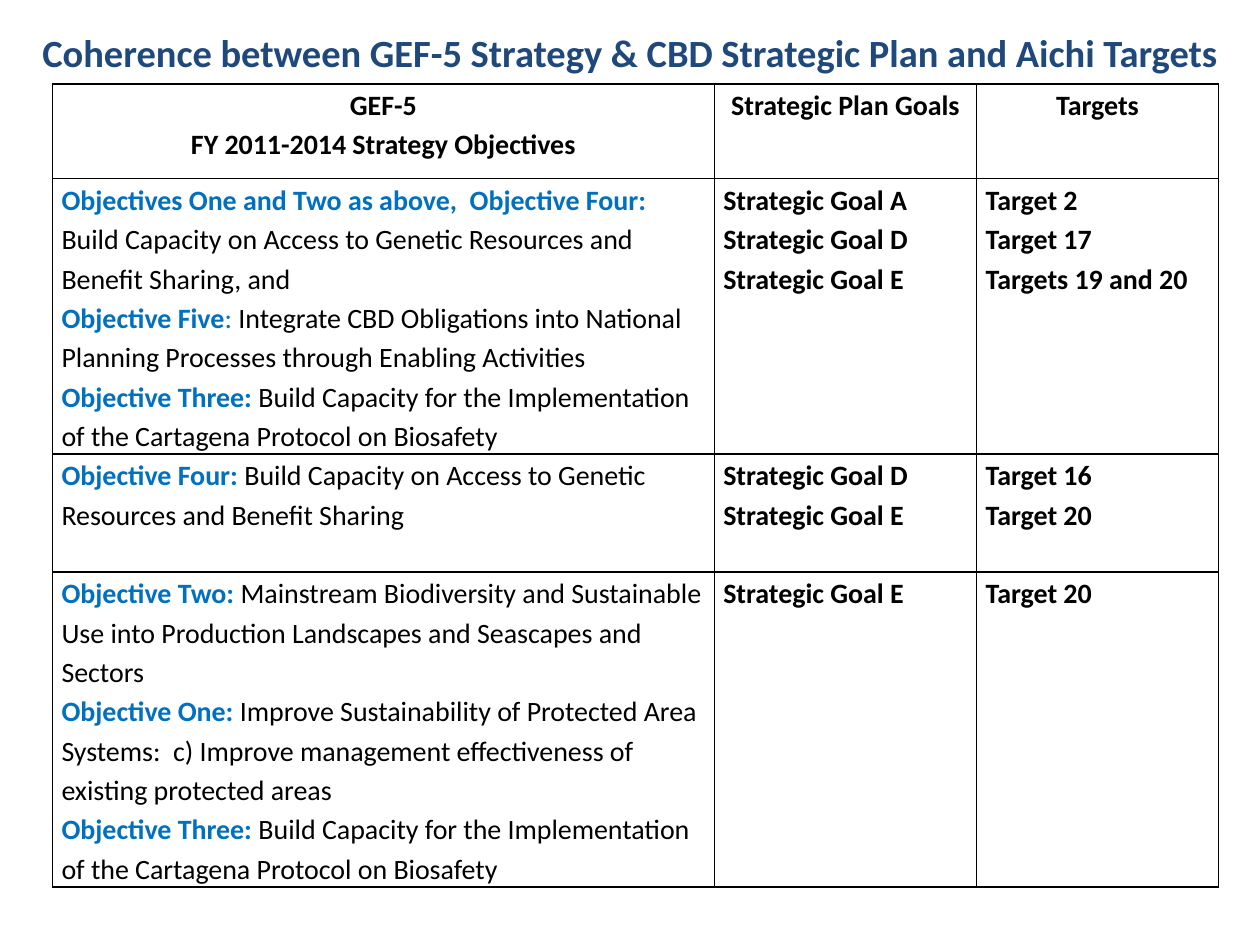
import pptx
import pptx.dml.color
import pptx.enum.text
import pptx.oxml
import pptx.oxml.ns
import pptx.util

Cm, Pt = pptx.util.Cm, pptx.util.Pt
ALIGN = pptx.enum.text.PP_ALIGN

BLACK, BLUE, NAVY, WHITE = "000000", "0070C0", "1F497D", "FFFFFF"
TITLE_FONT = {"name": "Calibri", "size": Pt(22), "bold": True}
BOLD_FONT = {"name": "Calibri", "size": Pt(16), "bold": True}
PLAIN_FONT = {**BOLD_FONT, "bold": False}
CELL_FORMAT = {"margin_left": Cm(0.18), "margin_right": Cm(0.18),
               "margin_top": 0, "margin_bottom": 0}

COLUMN_WIDTHS = [13.34, 5.29, 4.87]
ROW_HEIGHTS = [1.91, 5.54, 2.38, 6.33]

BIOSAFETY = ("Objective Three: ", "Build Capacity for the Implementation "
             "of the Cartagena Protocol on Biosafety")
HEADINGS = [["GEF-5", "FY 2011-2014 Strategy Objectives"],
            ["Strategic Plan Goals"], ["Targets"]]
# Each row: (objective, description) pairs, goals, targets
ROWS = [
    ([("Objectives One and Two as above,  Objective Four: ",
       "Build Capacity on Access to Genetic Resources and Benefit Sharing, and"),
      ("Objective Five", ": ", "Integrate CBD Obligations into National "
       "Planning Processes through Enabling Activities"),
      BIOSAFETY],
     ["Strategic Goal A", "Strategic Goal D", "Strategic Goal E"],
     ["Target 2", "Target 17", "Targets 19 and 20"]),
    ([("Objective Four: ",
       "Build Capacity on Access to Genetic Resources and Benefit Sharing")],
     ["Strategic Goal D", "Strategic Goal E"],
     ["Target 16", "Target 20"]),
    ([("Objective Two: ", "Mainstream Biodiversity and Sustainable Use into "
       "Production Landscapes and Seascapes and Sectors"),
      ("Objective One: ", "Improve Sustainability of Protected Area Systems:  "
       "c) Improve management effectiveness of existing protected areas"),
      BIOSAFETY],
     ["Strategic Goal E"],
     ["Target 20"]),
]


def color(hex_value):
    return pptx.dml.color.RGBColor.from_string(hex_value)


def apply_format(target, values):
    for name, value in values.items():
        setattr(target, name, value)


def add_run(paragraph, text, font_format, hex_value):
    run = paragraph.add_run()
    run.text = text
    apply_format(run.font, font_format)
    run.font.color.rgb = color(hex_value)


def objective_runs(parts):
    """Bold blue label, optional plain blue separator, plain black description."""
    label, *separator, description = parts
    return [(label, BOLD_FONT, BLUE),
            *((text, PLAIN_FONT, BLUE) for text in separator),
            (description, PLAIN_FONT, BLACK)]


def bold_runs(text):
    return [(text, BOLD_FONT, BLACK)]


def add_borders(cell):
    properties = cell._tc.get_or_add_tcPr()
    for side in ("lnL", "lnR", "lnT", "lnB"):
        properties.append(pptx.oxml.parse_xml(
            f'<a:{side} {pptx.oxml.ns.nsdecls("a")} w="12700"><a:solidFill>'
            f'<a:srgbClr val="{BLACK}"/></a:solidFill></a:{side}>'))


def fill_cell(cell, lines, alignment):
    apply_format(cell, CELL_FORMAT)
    add_borders(cell)
    cell.fill.solid()
    cell.fill.fore_color.rgb = color(WHITE)
    for index, runs in enumerate(lines):
        frame = cell.text_frame
        paragraph = frame.add_paragraph() if index else frame.paragraphs[0]
        apply_format(paragraph, {"alignment": alignment, "line_spacing": 1.15})
        for run in runs:
            add_run(paragraph, *run)


def add_title(slide, text):
    title = slide.shapes.title
    apply_format(title, {"left": Cm(0.42), "top": 0,
                         "width": Cm(24.56), "height": Cm(2.12)})
    apply_format(title.text_frame, {
        "word_wrap": True,
        "auto_size": pptx.enum.text.MSO_AUTO_SIZE.NONE,
        "vertical_anchor": pptx.enum.text.MSO_ANCHOR.MIDDLE})
    heading = title.text_frame.paragraphs[0]
    heading.alignment = ALIGN.CENTER
    add_run(heading, text, TITLE_FONT, NAVY)


def add_coherence_table(slide):
    coherence = slide.shapes.add_table(
        len(ROW_HEIGHTS), len(COLUMN_WIDTHS), Cm(1.06), Cm(1.69),
        Cm(sum(COLUMN_WIDTHS)), Cm(sum(ROW_HEIGHTS))).table
    for column, width in zip(coherence.columns, COLUMN_WIDTHS):
        column.width = Cm(width)
    for row, height in zip(coherence.rows, ROW_HEIGHTS):
        row.height = Cm(height)

    # Heading row
    for column, lines in enumerate(HEADINGS):
        fill_cell(coherence.cell(0, column), map(bold_runs, lines), ALIGN.CENTER)

    # Objectives with their goals and targets
    for row, (objectives, *matches) in enumerate(ROWS, start=1):
        fill_cell(coherence.cell(row, 0), map(objective_runs, objectives),
                  ALIGN.LEFT)
        for column, lines in enumerate(matches, start=1):
            fill_cell(coherence.cell(row, column), map(bold_runs, lines),
                      ALIGN.JUSTIFY)


def main():
    deck = pptx.Presentation()
    apply_format(deck, {"slide_width": Cm(25.4), "slide_height": Cm(19.05)})
    slide = deck.slides.add_slide(deck.slide_layouts[5])
    add_title(slide, "Coherence between GEF-5 Strategy & CBD Strategic Plan "
                     "and Aichi Targets")
    add_coherence_table(slide)
    deck.save("out.pptx")


if __name__ == "__main__":
    main()
